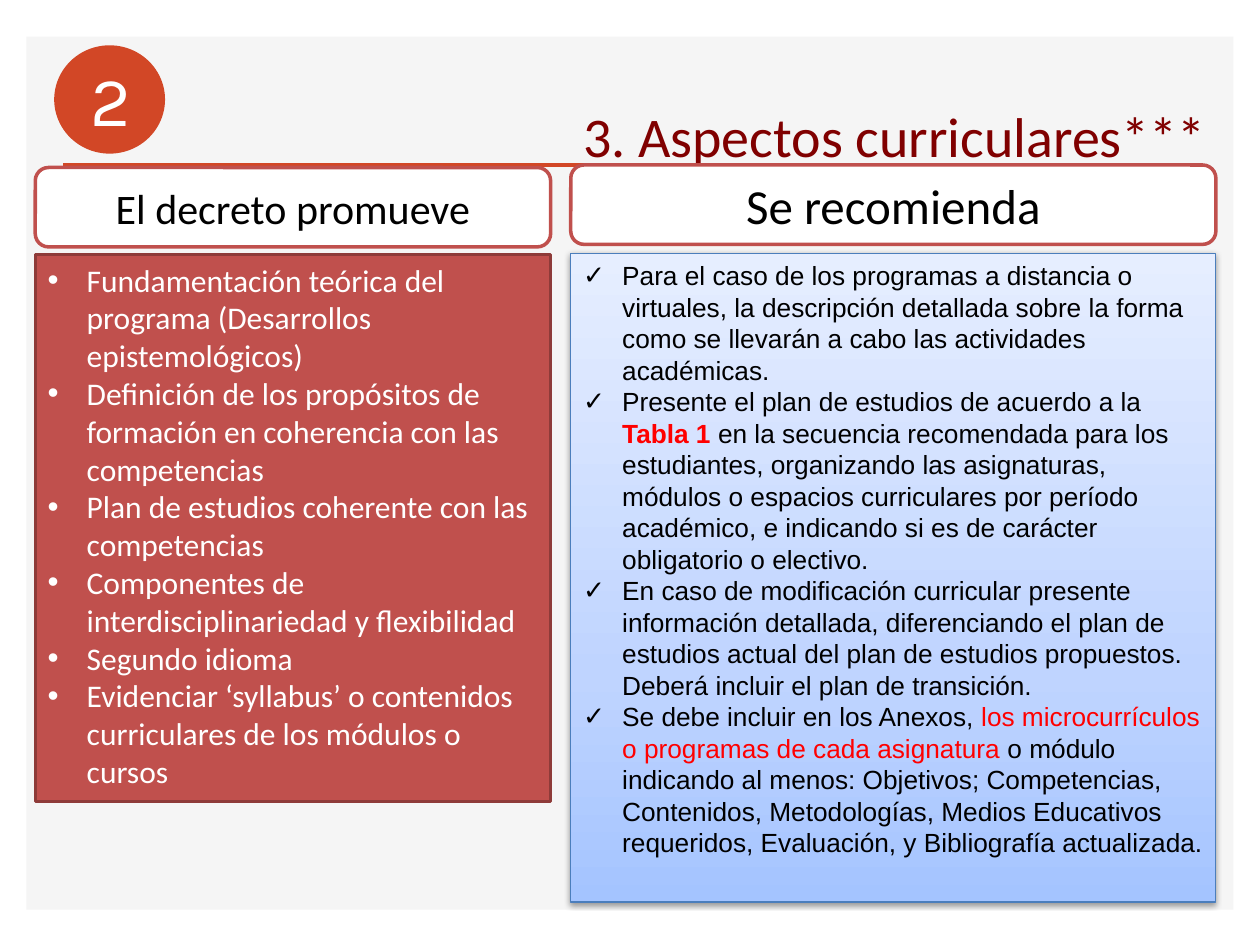
from lxml import etree
from pptx import Presentation
from pptx.dml.color import RGBColor
from pptx.enum.shapes import MSO_CONNECTOR as Connector, MSO_SHAPE as Shape
from pptx.enum.text import MSO_ANCHOR as Anchor, PP_ALIGN as Align
from pptx.oxml import parse_xml
from pptx.oxml.ns import nsdecls, qn
from pptx.util import Inches, Pt

COLORS = {
    "white": "FFFFFF", "black": "000000", "panel": "F5F5F5",
    "orange": "D24726", "title": "800000", "brick": "C0504D",
    "brick_edge": "8E3B39", "blue_edge": "4B7EBC", "red": "FF0000",
    "blue": "A4C4FF", "blue_mid": "BFD4FF", "blue_light": "E6EEFF",
}

PROMOTED = [
    "Fundamentación teórica del programa (Desarrollos epistemológicos)",
    "Definición de los propósitos de formación en coherencia con las competencias",
    "Plan de estudios coherente con las competencias",
    "Componentes de interdisciplinariedad y flexibilidad",
    "Segundo idioma",
    "Evidenciar ‘syllabus’ o contenidos curriculares de los módulos o cursos",
]

RECOMMENDED = [
    [("Para el caso de los programas a distancia o virtuales, la descripción detallada "
      "sobre la forma como se llevarán a cabo las actividades académicas.", "black", False)],
    [("Presente el plan de estudios de acuerdo a la ", "black", False),
     ("Tabla 1 ", "red", True),
     ("en la secuencia recomendada para los estudiantes, organizando las asignaturas, "
      "módulos o espacios curriculares por período académico, e indicando si es de "
      "carácter obligatorio o electivo.", "black", False)],
    [("En caso de modificación curricular presente información detallada, diferenciando "
      "el plan de estudios actual del plan de estudios propuestos. Deberá incluir el "
      "plan de transición.", "black", False)],
    [("Se debe incluir en los Anexos, ", "black", False),
     ("los microcurrículos o programas de cada asignatura ", "red", False),
     ("o módulo indicando al menos: Objetivos; Competencias, Contenidos, Metodologías, "
      "Medios Educativos requeridos, Evaluación, y Bibliografía actualizada.", "black", False)],
]


def rgb(name):
    return RGBColor.from_string(COLORS[name])


def add_box(slide, kind, box, fill, line=None, width=2):
    shape = slide.shapes.add_shape(kind, *map(Inches, box))
    shape.shadow.inherit = False
    if fill:
        shape.fill.solid()
        shape.fill.fore_color.rgb = rgb(fill)
    if line:
        shape.line.color.rgb = rgb(line)
        shape.line.width = Pt(width)
    else:
        shape.line.fill.background()
    return shape


def add_run(paragraph, text, size, font, color, bold=False):
    run = paragraph.add_run()
    run.text = text
    run.font.size = Pt(size)
    run.font.name = font
    run.font.bold = bold
    run.font.color.rgb = rgb(color)


def add_label(slide, box, text, size, font, color, align, wrap):
    frame = slide.shapes.add_textbox(*map(Inches, box)).text_frame
    frame.word_wrap = wrap
    paragraph = frame.paragraphs[0]
    paragraph.alignment = align
    add_run(paragraph, text, size, font, color)


def add_bullets(shape, items, bullet, size, font):
    frame = shape.text_frame
    frame.word_wrap = True
    frame.vertical_anchor = Anchor.TOP
    for index, runs in enumerate(items):
        paragraph = frame.add_paragraph() if index else frame.paragraphs[0]
        paragraph.alignment = Align.LEFT
        properties = paragraph._p.get_or_add_pPr()
        properties.set("marL", str(Inches(0.31)))
        properties.set("indent", str(-Inches(0.31)))
        etree.SubElement(properties, qn("a:buFont")).set("typeface", "Arial")
        etree.SubElement(properties, qn("a:buChar")).set("char", bullet)
        for text, color, bold in runs:
            add_run(paragraph, text, size, font, color, bold)


def add_gradient_and_shadow(shape):
    properties = shape._element.spPr
    stops = "".join(
        f'<a:gs pos="{position * 1000}"><a:srgbClr val="{COLORS[name]}"/></a:gs>'
        for position, name in ((0, "blue"), (35, "blue_mid"), (100, "blue_light")))
    gradient = parse_xml(
        f'<a:gradFill {nsdecls("a")} rotWithShape="1"><a:gsLst>{stops}</a:gsLst>'
        '<a:lin ang="16200000" scaled="0"/></a:gradFill>')
    properties.find(qn("a:prstGeom")).addnext(gradient)
    shadow = parse_xml(
        f'<a:outerShdw {nsdecls("a")} blurRad="{Pt(3.1)}" dist="{Pt(1.6)}" dir="5400000" '
        f'rotWithShape="0"><a:srgbClr val="{COLORS["black"]}"><a:alpha val="38000"/>'
        '</a:srgbClr></a:outerShdw>')
    properties.find(qn("a:effectLst")).append(shadow)


def add_background(slide, box):
    add_box(slide, Shape.RECTANGLE, box, "panel")
    left, top, width, _ = box
    rule_y = Inches(top + 1.02)
    rule = slide.shapes.add_connector(
        Connector.STRAIGHT, Inches(left + 0.29), rule_y,
        Inches(left + width - 0.29), rule_y)
    rule.line.color.rgb = rgb("orange")
    rule.line.width = Pt(2)
    etree.SubElement(rule._element.spPr, qn("a:effectLst"))


def add_badge(slide, box, number):
    left, top, width, _ = box
    add_box(slide, Shape.OVAL, box, "orange")
    add_label(slide, (left - 0.15, top + 0.04, width + 0.32, 0.77), number,
              40, "Karla", "white", Align.CENTER, True)


def add_heading(slide, box, text, size):
    shape = add_box(slide, Shape.ROUNDED_RECTANGLE, box, "white", "brick")
    frame = shape.text_frame
    frame.word_wrap = True
    frame.vertical_anchor = Anchor.MIDDLE
    paragraph = frame.paragraphs[0]
    paragraph.alignment = Align.CENTER
    add_run(paragraph, text, size, "Calibri", "black")


def add_promoted(slide, box):
    left, top, width, height = box
    body = add_box(slide, Shape.RECTANGLE, (left, top + 0.69, width, height - 0.69),
                   "brick", "brick_edge")
    add_bullets(body, [[(text, "white", False)] for text in PROMOTED], "•", 18, "Calibri")
    add_heading(slide, (left, top, width, 0.63), "El decreto promueve", 24)


def add_recommended(slide, box):
    left, top, width, height = box
    add_heading(slide, (left, top, width, 0.63), "Se recomienda", 28)
    body = add_box(slide, Shape.RECTANGLE, (left, top + 0.7, width, height - 0.7),
                   None, "blue_edge", 0.75)
    add_gradient_and_shadow(body)
    add_bullets(body, RECOMMENDED, "✓", 15, "Arial")


def main():
    presentation = Presentation()
    presentation.slide_width = Inches(10)
    presentation.slide_height = Inches(7.5)
    slide = presentation.slides.add_slide(presentation.slide_layouts[6])
    add_background(slide, (0.21, 0.29, 9.58, 6.93))
    add_badge(slide, (0.43, 0.36, 0.88, 0.86), "2")
    add_label(slide, (4.53, 0.76, 5.2, 0.64), "3. Aspectos curriculares***",
              32, "Calibri", "title", Align.LEFT, False)
    add_promoted(slide, (0.28, 1.33, 4.09, 5.03))
    add_recommended(slide, (4.53, 1.31, 5.12, 5.85))
    presentation.save("out.pptx")


if __name__ == "__main__":
    main()
